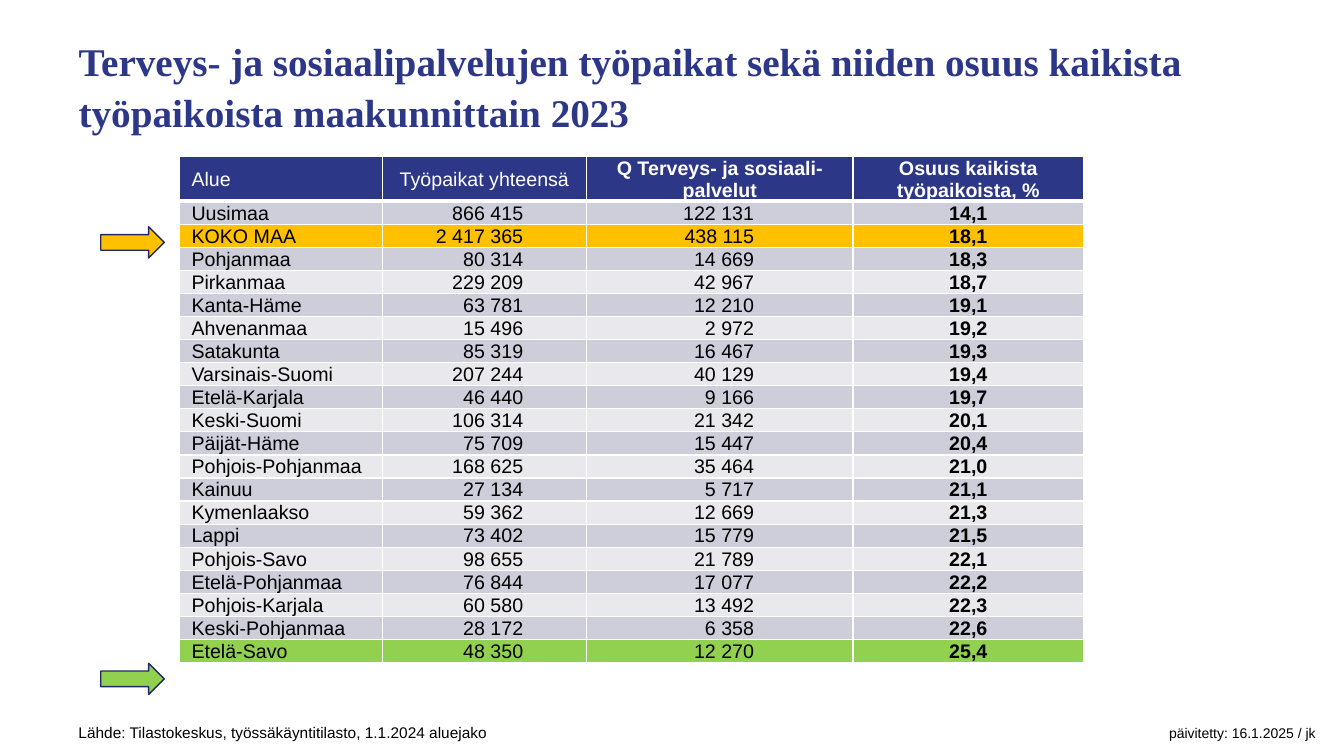
from lxml import etree
from pptx import Presentation
from pptx.dml.color import RGBColor
from pptx.enum.shapes import MSO_SHAPE
from pptx.enum.text import MSO_ANCHOR, MSO_AUTO_SIZE, PP_ALIGN
from pptx.oxml.ns import qn
from pptx.util import Emu, Pt

PX = 9144  # 100 px to the inch
LEFT, CENTER, RIGHT = PP_ALIGN.LEFT, PP_ALIGN.CENTER, PP_ALIGN.RIGHT
TOP, MIDDLE = MSO_ANCHOR.TOP, MSO_ANCHOR.MIDDLE
NO_AUTOFIT = MSO_AUTO_SIZE.NONE
RIGHT_ARROW = MSO_SHAPE.RIGHT_ARROW

NAVY, WHITE, BLACK = "2D3787", "FFFFFF", "000000"
AMBER, GREEN, ARROW_LINE = "FFC000", "92D050", "212964"
BANDS = ["E8E8ED", "CDCED9"]
HIGHLIGHTS = {"KOKO MAA": AMBER, "Etelä-Savo": GREEN}

HEADERS = ["Alue", "Työpaikat yhteensä", "Q Terveys- ja sosiaali-palvelut",
           "Osuus kaikista työpaikoista, %"]
REGIONS = [
    ("Uusimaa", "866 415", "122 131", "14,1"),
    ("KOKO MAA", "2 417 365", "438 115", "18,1"),
    ("Pohjanmaa", "80 314", "14 669", "18,3"),
    ("Pirkanmaa", "229 209", "42 967", "18,7"),
    ("Kanta-Häme", "63 781", "12 210", "19,1"),
    ("Ahvenanmaa", "15 496", "2 972", "19,2"),
    ("Satakunta", "85 319", "16 467", "19,3"),
    ("Varsinais-Suomi", "207 244", "40 129", "19,4"),
    ("Etelä-Karjala", "46 440", "9 166", "19,7"),
    ("Keski-Suomi", "106 314", "21 342", "20,1"),
    ("Päijät-Häme", "75 709", "15 447", "20,4"),
    ("Pohjois-Pohjanmaa", "168 625", "35 464", "21,0"),
    ("Kainuu", "27 134", "5 717", "21,1"),
    ("Kymenlaakso", "59 362", "12 669", "21,3"),
    ("Lappi", "73 402", "15 779", "21,5"),
    ("Pohjois-Savo", "98 655", "21 789", "22,1"),
    ("Etelä-Pohjanmaa", "76 844", "17 077", "22,2"),
    ("Pohjois-Karjala", "60 580", "13 492", "22,3"),
    ("Keski-Pohjanmaa", "28 172", "6 358", "22,6"),
    ("Etelä-Savo", "48 350", "12 270", "25,4"),
]
COL_WIDTHS = [201, 203, 264, 229]
HEADER_ALIGN = [LEFT, CENTER, CENTER, CENTER]
BODY_ALIGN = [LEFT, RIGHT, RIGHT, CENTER]
LEFT_INSETS = [12, 1, 1, 1]
RIGHT_INSETS = [1, 63, 98, 1]


def px(n):
    return Emu(n * PX)


def rgb(value):
    return RGBColor.from_string(value)


def add_run(p, text, size, color, bold=False, font="Arial"):
    r = p.add_run()
    r.text = text
    r.font.name, r.font.size, r.font.bold = font, Pt(size), bold
    r.font.color.rgb = rgb(color)


def set_borders(cell, bottom):
    tcPr = cell._tc.get_or_add_tcPr()
    for i, (side, width) in enumerate([("L", 1), ("R", 1), ("T", 1), ("B", bottom)]):
        ln = etree.Element(qn(f"a:ln{side}"), w=str(Pt(width)))
        fill = etree.SubElement(ln, qn("a:solidFill"))
        etree.SubElement(fill, qn("a:srgbClr"), val=WHITE)
        tcPr.insert(i, ln)


def format_cell(cell, text, align, insets, fill, color, bold, bottom=1):
    cell.fill.solid()
    cell.fill.fore_color.rgb = rgb(fill)
    set_borders(cell, bottom)
    cell.vertical_anchor = MIDDLE
    cell.margin_left, cell.margin_right = (px(n) for n in insets)
    cell.margin_top, cell.margin_bottom = px(1), 0
    p = cell.text_frame.paragraphs[0]
    p.alignment = align
    add_run(p, text, 14, color, bold)


def add_title(s, x, y, w, h):
    sp = s.shapes.title
    sp.left, sp.top, sp.width, sp.height = px(x), px(y), px(w), px(h)
    tf = sp.text_frame
    tf.word_wrap, tf.auto_size, tf.vertical_anchor = True, NO_AUTOFIT, TOP
    p = tf.paragraphs[0]
    p.alignment, p.line_spacing = LEFT, 1.07
    add_run(p, "Terveys- ja sosiaalipalvelujen työpaikat sekä niiden osuus "
               "kaikista työpaikoista maakunnittain 2023",
            28, NAVY, True, "Times New Roman")


def add_region_table(s, x, y, header_h, row_h):
    table = s.shapes.add_table(
        len(REGIONS) + 1, len(HEADERS), px(x), px(y), px(sum(COL_WIDTHS)),
        px(header_h + row_h * len(REGIONS))).table
    for col, width in zip(table.columns, COL_WIDTHS):
        col.width = px(width)
    # Rows grow to the height of their text
    for i, row in enumerate(table.rows):
        row.height = px(row_h if i else header_h)
    for j, text in enumerate(HEADERS):
        format_cell(table.cell(0, j), text, HEADER_ALIGN[j], (LEFT_INSETS[j], 1),
                    NAVY, WHITE, j >= 2, bottom=3)
    for i, region in enumerate(REGIONS, 1):
        fill = HIGHLIGHTS.get(region[0], BANDS[i % 2])
        for j, text in enumerate(region):
            format_cell(table.cell(i, j), text, BODY_ALIGN[j],
                        (LEFT_INSETS[j], RIGHT_INSETS[j]), fill, BLACK, j == 3)


def add_arrow(s, x, y, w, h, fill):
    sp = s.shapes.add_shape(RIGHT_ARROW, px(x), px(y), px(w), px(h))
    sp.shadow.inherit = False
    sp.fill.solid()
    sp.fill.fore_color.rgb = rgb(fill)
    sp.line.color.rgb = rgb(ARROW_LINE)
    sp.line.width = Pt(1)


def add_footer(s, x, y, w, h):
    tf = s.shapes.add_textbox(px(x), px(y), px(w), px(h)).text_frame
    tf.word_wrap = True
    p = tf.paragraphs[0]
    # Right tab for the update date
    tabs = etree.SubElement(p._p.get_or_add_pPr(), qn("a:tabLst"))
    etree.SubElement(tabs, qn("a:tab"), pos=str(px(w - 33)), algn="r")
    add_run(p, "Lähde: Tilastokeskus, työssäkäyntitilasto, 1.1.2024 aluejako\t", 11, BLACK)
    add_run(p, "päivitetty: 16.1.2025 / jk", 10, BLACK)


def main():
    prs = Presentation()
    prs.slide_width, prs.slide_height = px(1333), px(750)
    s = prs.slides.add_slide(prs.slide_layouts[5])
    add_title(s, 68, 29, 1165, 57)
    add_region_table(s, 178, 155, 27, 14)
    # Arrows pointing at the highlighted rows
    for y, fill in [(225, AMBER), (658, GREEN)]:
        add_arrow(s, 100, y, 63, 31, fill)
    add_footer(s, 68, 712, 1260, 33)
    prs.save("out.pptx")


if __name__ == "__main__":
    main()
